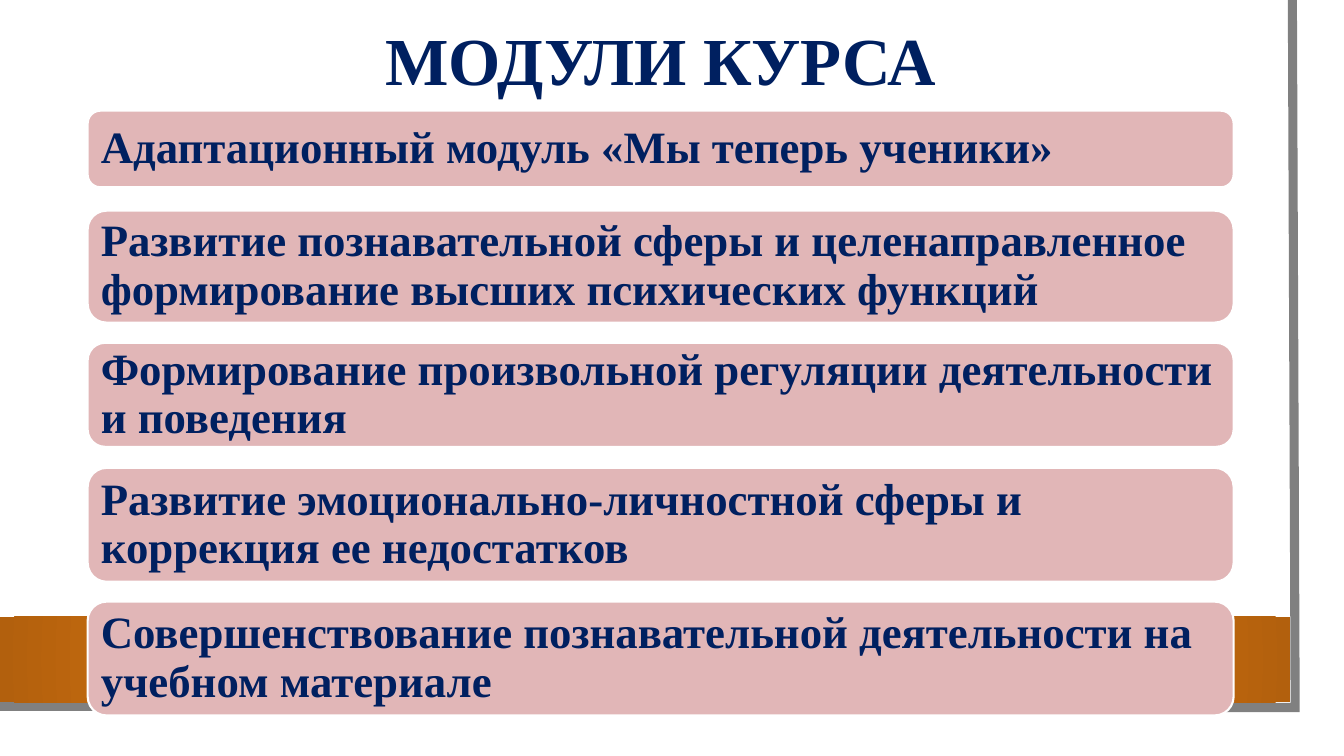
from lxml import etree
from pptx import Presentation
from pptx.dml.color import RGBColor
from pptx.enum.shapes import MSO_SHAPE
from pptx.enum.text import MSO_ANCHOR, PP_ALIGN
from pptx.oxml import parse_xml
from pptx.oxml.ns import nsdecls, qn
from pptx.util import Cm, Pt

RECTANGLE = MSO_SHAPE.RECTANGLE
ROUNDED = MSO_SHAPE.ROUNDED_RECTANGLE
MIDDLE = MSO_ANCHOR.MIDDLE
LEFT, CENTER = PP_ALIGN.LEFT, PP_ALIGN.CENTER

NAVY = RGBColor(0x00, 0x20, 0x60)
ROSE = RGBColor(0xE1, 0xB6, 0xB7)
WHITE = RGBColor(0xFF, 0xFF, 0xFF)
GRAY = RGBColor(0x80, 0x80, 0x80)
ORANGE = RGBColor(0xEE, 0x80, 0x11)
BROWN = RGBColor(0xB2, 0x60, 0x0D)
FONT = "Times New Roman"
CORNER = 0.1667
CORNER_INSET = 0.29

MODULES = [
    (0, 1.93, "Адаптационный модуль «Мы теперь ученики»"),
    (2.52, 2.82, "Развитие познавательной сферы и целенаправленное "
                 "формирование высших психических функций"),
    (5.85, 2.62, "Формирование произвольной регуляции деятельности и поведения"),
    (9.0, 2.87, "Развитие эмоционально-личностной сферы и коррекция ее недостатков"),
    (12.37, 2.87, "Совершенствование познавательной деятельности на учебном материале"),
]


def write_text(frame, text, size, alignment):
    frame.word_wrap = True
    frame.vertical_anchor = MIDDLE
    frame.text = text
    paragraph = frame.paragraphs[0]
    paragraph.alignment = alignment
    paragraph.line_spacing = 0.9
    font = paragraph.runs[0].font
    font.name, font.size, font.bold = FONT, Pt(size), True
    font.color.rgb = NAVY


def add_frame(slide, left, top, width, height):
    right, bottom = left + width, top + height
    builder = slide.shapes.build_freeform(Cm(right - 0.07), Cm(top))
    builder.add_line_segments(
        [(Cm(right), Cm(bottom)), (Cm(left), Cm(bottom - 0.03))], close=False)
    edge = builder.convert_to_shape()
    edge.shadow.inherit = False
    edge.fill.background()
    edge.line.color.rgb = GRAY
    edge.line.width = Pt(6.5)
    etree.SubElement(edge.line._get_or_add_ln(), qn("a:miter"), lim="800000")


def add_band(slide, left, top, width, height):
    band = slide.shapes.add_shape(RECTANGLE, Cm(left), Cm(top), Cm(width), Cm(height))
    band.shadow.inherit = False
    band.line.fill.background()
    band.fill.solid()
    solid = band._element.spPr.find(qn("a:solidFill"))
    gradient = parse_xml(
        f'<a:gradFill {nsdecls("a")} rotWithShape="1"><a:gsLst>'
        f'<a:gs pos="34000"><a:srgbClr val="{ORANGE}"/></a:gs>'
        f'<a:gs pos="100000"><a:srgbClr val="{BROWN}"/></a:gs></a:gsLst>'
        '<a:path path="circle"><a:fillToRect l="50000" t="50000" r="50000" b="50000"/>'
        '</a:path></a:gradFill>')
    solid.getparent().replace(solid, gradient)


def add_title(slide, left, top, width, height):
    title = slide.shapes.add_textbox(Cm(left), Cm(top), Cm(width), Cm(height))
    write_text(title.text_frame, "МОДУЛИ КУРСА", 48, CENTER)


def add_modules(slide, left, top, width):
    for offset, height, text in MODULES:
        module = slide.shapes.add_shape(
            ROUNDED, Cm(left), Cm(top + offset), Cm(width), Cm(height))
        module.adjustments[0] = CORNER
        module.shadow.inherit = False
        module.fill.solid()
        module.fill.fore_color.rgb = ROSE
        module.line.color.rgb = WHITE
        module.line.width = Pt(1.5)
        frame = module.text_frame
        margin = Cm(0.33 - CORNER_INSET * CORNER * height)
        frame.margin_left = frame.margin_right = margin
        frame.margin_top = frame.margin_bottom = margin
        write_text(frame, text, 32, LEFT)


def main():
    presentation = Presentation()
    presentation.slide_width, presentation.slide_height = Cm(33.87), Cm(19.05)
    slide = presentation.slides.add_slide(presentation.slide_layouts[6])
    add_frame(slide, -0.08, 0, 32.72, 17.83)
    add_band(slide, 0, 15.54, 32.51, 2.16)
    add_title(slide, 2.21, 0, 28.88, 3.2)
    add_modules(slide, 2.21, 2.79, 28.88)
    presentation.save("out.pptx")


if __name__ == "__main__":
    main()
